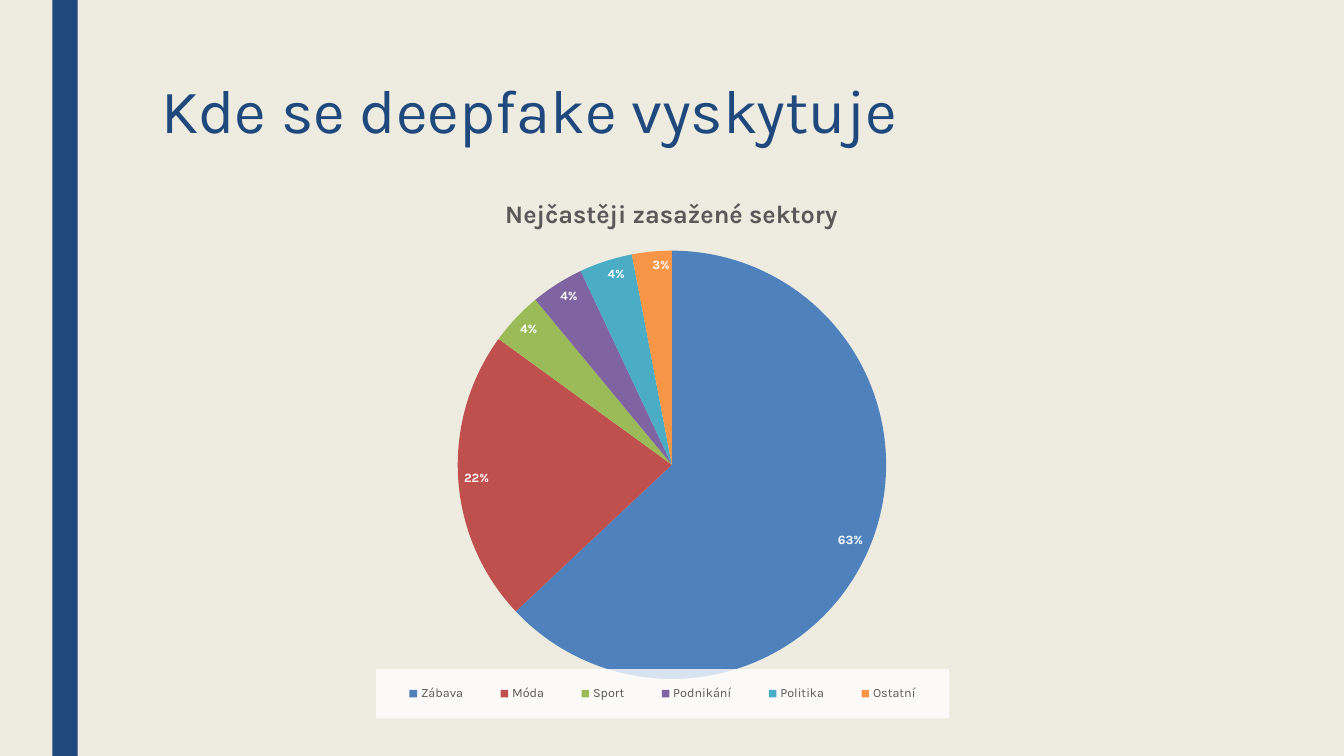
from lxml import etree
from pptx import Presentation
from pptx.chart.data import CategoryChartData
from pptx.dml.color import RGBColor
from pptx.enum.chart import XL_CHART_TYPE as ChartType
from pptx.enum.chart import XL_LABEL_POSITION as LabelPosition
from pptx.enum.chart import XL_LEGEND_POSITION as LegendPosition
from pptx.enum.shapes import MSO_SHAPE as Shape
from pptx.enum.text import MSO_ANCHOR as Anchor
from pptx.oxml import parse_xml
from pptx.oxml.ns import nsdecls, qn
from pptx.util import Inches, Pt

FONT = "Karla"
COLORS = {
    "paper": "EEECE1",
    "navy": "1F497D",
    "grey": "595959",
    "black": "000000",
    "white": "FFFFFF",
    "blue": "4F81BD",
    "red": "C0504D",
    "green": "9BBB59",
    "purple": "8064A2",
    "teal": "4BACC6",
    "orange": "F79646",
}
SECTORS = [
    ("Zábava", 63, "blue"),
    ("Móda", 22, "red"),
    ("Sport", 4, "green"),
    ("Podnikání", 4, "purple"),
    ("Politika", 4, "teal"),
    ("Ostatní", 3, "orange"),
]
CHART_TITLE = "Nejčastěji zasažené sektory"


def style_font(font, size, color, bold=False):
    font.name = FONT
    font.size = Pt(size)
    font.bold = bold
    font.color.rgb = RGBColor.from_string(COLORS[color])


def paint(fill, color):
    fill.solid()
    fill.fore_color.rgb = RGBColor.from_string(COLORS[color])


def manual_layout(x, y, w, h, inner=False):
    layout = etree.Element(qn("c:layout"))
    manual = etree.SubElement(layout, qn("c:manualLayout"))
    settings = {"xMode": "edge", "yMode": "edge", "x": x, "y": y, "w": w, "h": h}
    if inner:
        settings = {"layoutTarget": "inner", **settings}
    for tag, value in settings.items():
        etree.SubElement(manual, qn(f"c:{tag}")).set("val", f"{value:.3f}" if tag in "xywh" else value)
    return layout


def drop_layout(parent):
    for layout in parent.findall(qn("c:layout")):
        parent.remove(layout)


def solid_area(color, alpha=100):
    return parse_xml(
        f'<c:spPr {nsdecls("c", "a")}><a:solidFill><a:srgbClr val="{COLORS[color]}">'
        f'<a:alpha val="{alpha * 1000}"/></a:srgbClr></a:solidFill>'
        '<a:ln><a:noFill/></a:ln></c:spPr>'
    )


def add_stripe(slide, left, top, width, height):
    stripe = slide.shapes.add_shape(
        Shape.RECTANGLE, Inches(left), Inches(top), Inches(width), Inches(height)
    )
    stripe.shadow.inherit = False
    paint(stripe.fill, "navy")
    stripe.line.fill.background()


def add_heading(slide, text, left, top, width, height):
    heading = slide.shapes.add_textbox(
        Inches(left), Inches(top), Inches(width), Inches(height)
    ).text_frame
    heading.word_wrap = True
    heading.vertical_anchor = Anchor.TOP
    line = heading.paragraphs[0]
    line.line_spacing = 0.89
    run = line.add_run()
    run.text = text
    style_font(run.font, 44, "navy")


def style_legend(chart):
    chart.has_legend = True
    legend = chart.legend
    legend.position = LegendPosition.BOTTOM
    legend.include_in_layout = True
    style_font(legend.font, 9, "grey")
    legend_xml = chart._chartSpace.find(".//" + qn("c:legend"))
    drop_layout(legend_xml)
    legend_xml.find(qn("c:legendPos")).addnext(manual_layout(0.181, 0.902, 0.619, 0.09))
    legend_xml.find(qn("c:txPr")).addprevious(solid_area("white", 78))


def style_slices(chart):
    plot = chart.plots[0]
    plot.vary_by_categories = True
    for index, (_, _, color) in enumerate(SECTORS):
        paint(plot.series[0].points[index].format.fill, color)
    plot.has_data_labels = True
    labels = plot.data_labels
    labels.show_percentage = True
    labels.show_value = False
    labels.number_format = "0%"
    labels.number_format_is_linked = False
    labels.position = LabelPosition.INSIDE_END
    style_font(labels.font, 9, "white", bold=True)


def add_sector_pie(slide, left, top, width, height):
    data = CategoryChartData()
    data.categories = [name for name, _, _ in SECTORS]
    data.add_series(CHART_TITLE, [share for _, share, _ in SECTORS])
    chart = slide.shapes.add_chart(
        ChartType.PIE, Inches(left), Inches(top), Inches(width), Inches(height), data
    ).chart
    style_font(chart.font, 10, "black")
    chart.has_title = True
    title_run = chart.chart_title.text_frame.paragraphs[0].add_run()
    title_run.text = CHART_TITLE
    style_font(title_run.font, 18, "grey", bold=True)
    style_slices(chart)
    style_legend(chart)

    space = chart._chartSpace
    plot_area = space.find(".//" + qn("c:plotArea"))
    drop_layout(plot_area)
    diameter = 4.25
    across, down = diameter / width, diameter / height
    plot_area.insert(0, manual_layout((1 - across) / 2, 0.136, across, down, inner=True))
    space.find(qn("c:chart")).addnext(solid_area("paper"))


def build_sector_slide(deck):
    slide = deck.slides.add_slide(deck.slide_layouts[6])
    paint(slide.background.fill, "paper")
    add_stripe(slide, 0.52, 0, 0.25, 7.5)
    add_heading(slide, "Kde se deepfake vyskytuje", 1.5, 0.75, 10.5, 1.62)
    add_sector_pie(slide, 2.07, 1.75, 9.18, 5.42)


def main():
    deck = Presentation()
    deck.slide_width = Inches(13.33)
    deck.slide_height = Inches(7.5)
    build_sector_slide(deck)
    deck.save("out.pptx")


if __name__ == "__main__":
    main()
